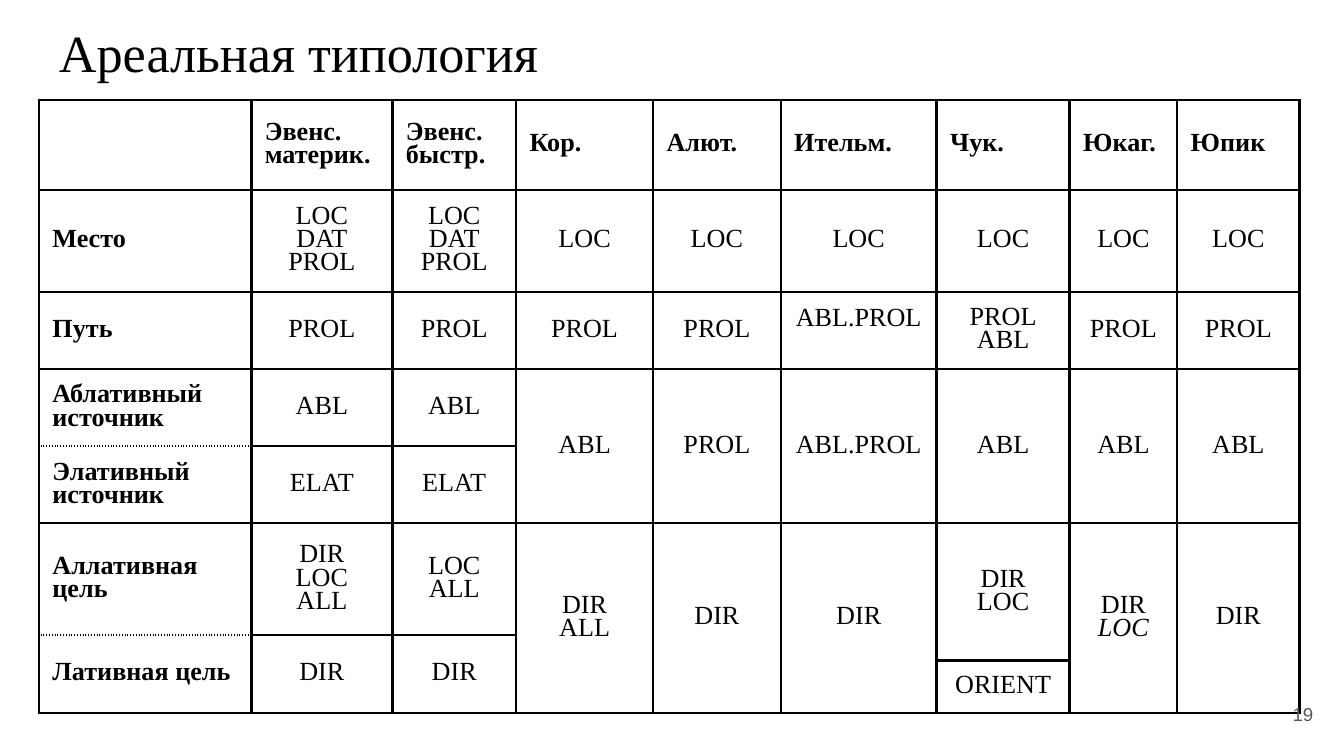
from lxml import etree
from pptx import Presentation
from pptx.dml.color import RGBColor
from pptx.enum.text import MSO_ANCHOR, PP_ALIGN
from pptx.oxml.ns import qn
from pptx.util import Inches, Pt

LEFT, CENTER, RIGHT = PP_ALIGN.LEFT, PP_ALIGN.CENTER, PP_ALIGN.RIGHT
TOP, MIDDLE = MSO_ANCHOR.TOP, MSO_ANCHOR.MIDDLE
COLORS = {"ink": "000000", "page_number": "595959"}
SERIF, SANS = "Times New Roman", "Arial"
WIDTH, HEIGHT = Inches(10), Inches(5.625)
INSET = Inches(0.1)
HALF_LINE = Pt(12)

# Percent of the slide: left, top, width, height
TITLE_BOX = (3.4, 0.9, 93.2, 11.2)
TABLE_BOX = (2.9, 13.2, 93.7, 80.9)
NUMBER_BOX = (92.7, 90.7, 6, 7.6)
COLUMNS = [15.8, 10.5, 9.2, 10.2, 9.5, 11.6, 9.9, 8, 9.1]
ROWS = [11.9, 11.9, 8.9, 8.7, 8.7, 14.8, 3.4, 5.3]

LANGUAGES = ["", "Эвенс. материк.", "Эвенс. быстр.", "Кор.", "Алют.",
             "Ительм.", "Чук.", "Юкаг.", "Юпик"]
# None marks a cell that continues the one above it
CASES = [
    LANGUAGES,
    ["Место"] + ["LOC\nDAT\nPROL"] * 2 + ["LOC"] * 6,
    ["Путь"] + ["PROL"] * 4 + ["ABL.PROL", "PROL\nABL", "PROL", "PROL"],
    ["Аблативный источник", "ABL", "ABL", "ABL", "PROL", "ABL.PROL"] + ["ABL"] * 3,
    ["Элативный источник", "ELAT", "ELAT"] + [None] * 6,
    ["Аллативная цель", "DIR\nLOC\nALL", "LOC\nALL", "DIR\nALL", "DIR", "DIR",
     "DIR\nLOC", "DIR\nLOC", "DIR"],
    ["Лативная цель", "DIR", "DIR"] + [None] * 6,
    [None] * 6 + ["ORIENT", None, None],
]
RAISED_PATH = (2, 5)
RARE_GOAL = (5, 7)
SPLIT_ROWS = (3, 5)  # rows whose lower edge is light in the first columns
SPLIT_COLUMNS = 3


def x(percent):
    return round(WIDTH * percent / 100)


def y(percent):
    return round(HEIGHT * percent / 100)


def place(box):
    left, top, width, height = box
    return x(left), y(top), x(width), y(height)


def format_run(run, size, font, color, bold=False):
    run.font.size = Pt(size)
    run.font.name = font
    run.font.bold = bold
    run.font.color.rgb = RGBColor.from_string(COLORS[color])


def add_label(slide, box, text, size, font, color, align, anchor):
    frame = slide.shapes.add_textbox(*place(box)).text_frame
    frame.word_wrap = True
    frame.vertical_anchor = anchor
    frame.margin_left = frame.margin_right = INSET
    frame.margin_top = frame.margin_bottom = INSET
    frame.text = text
    frame.paragraphs[0].alignment = align
    format_run(frame.paragraphs[0].runs[0], size, font, color)


def edge_styles(row, column):
    """Width and dash of each side, in the order the schema asks for."""
    edges = {side: (1.5, "solid") for side in ("L", "R", "T", "B")}
    if column < SPLIT_COLUMNS:
        light = (1.5, "dot") if column == 0 else (0.75, "solid")
        if row in SPLIT_ROWS:
            edges["B"] = light
        if row - 1 in SPLIT_ROWS:
            edges["T"] = light
    return edges


def draw_borders(cell, edges):
    properties = cell._tc.get_or_add_tcPr()
    for index, (side, (width, dash)) in enumerate(edges.items()):
        line = etree.Element(qn(f"a:ln{side}"), w=str(Pt(width)))
        fill = etree.SubElement(line, qn("a:solidFill"))
        etree.SubElement(fill, qn("a:srgbClr"), val=COLORS["ink"])
        etree.SubElement(line, qn("a:prstDash"), val=dash)
        properties.insert(index, line)


def fill_cell(cell, text, is_heading):
    cell.vertical_anchor = MIDDLE
    cell.margin_left = cell.margin_right = INSET
    cell.margin_top = cell.margin_bottom = INSET
    cell.text_frame.text = text
    for paragraph in cell.text_frame.paragraphs:
        paragraph.alignment = LEFT if is_heading else CENTER
        paragraph.line_spacing = 0.8
        for run in paragraph.runs:
            format_run(run, 14, SERIF, "ink", is_heading)


def add_case_table(slide, box):
    table_frame = slide.shapes.add_table(len(ROWS), len(COLUMNS), *place(box))
    table = table_frame.table
    table.first_row = table.horz_banding = False
    for column, share in zip(table.columns, COLUMNS):
        column.width = x(share)
    for row, share in zip(table.rows, ROWS):
        row.height = y(share)

    for r, cases in enumerate(CASES):
        for c, text in enumerate(cases):
            cell = table.cell(r, c)
            cell.fill.background()
            draw_borders(cell, edge_styles(r, c))
            if text is None:
                continue
            fill_cell(cell, text, r == 0 or c == 0)
            last = r
            while last + 1 < len(CASES) and CASES[last + 1][c] is None:
                last += 1
            if last > r:
                cell.merge(table.cell(last, c))

    table.cell(*RAISED_PATH).margin_bottom = INSET + HALF_LINE
    rare_case = table.cell(*RARE_GOAL).text_frame.paragraphs[-1]
    rare_case.runs[0].font.italic = True


def main():
    deck = Presentation()
    deck.slide_width, deck.slide_height = WIDTH, HEIGHT
    slide = deck.slides.add_slide(deck.slide_layouts[6])
    add_label(slide, TITLE_BOX, "Ареальная типология", 28, SERIF, "ink", LEFT, TOP)
    add_case_table(slide, TABLE_BOX)
    add_label(slide, NUMBER_BOX, "19", 10, SANS, "page_number", RIGHT, MIDDLE)
    deck.save("out.pptx")


if __name__ == "__main__":
    main()
